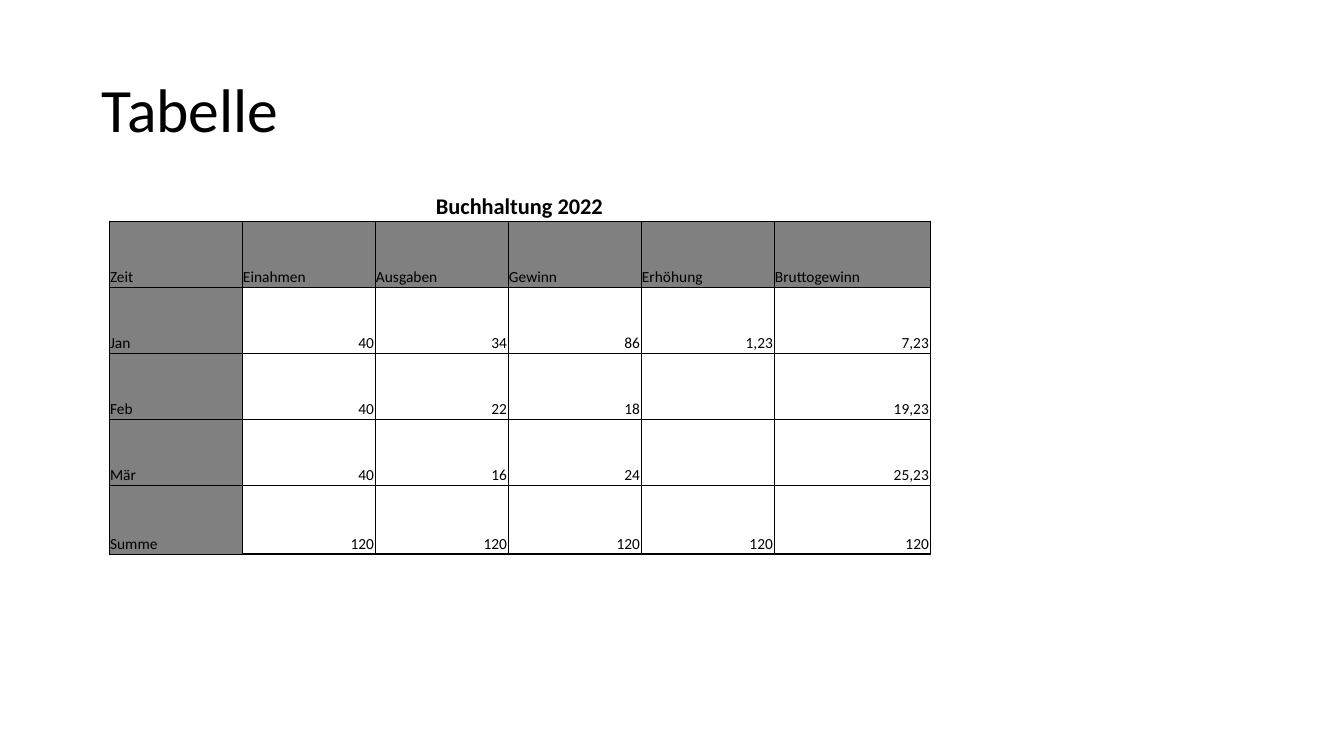
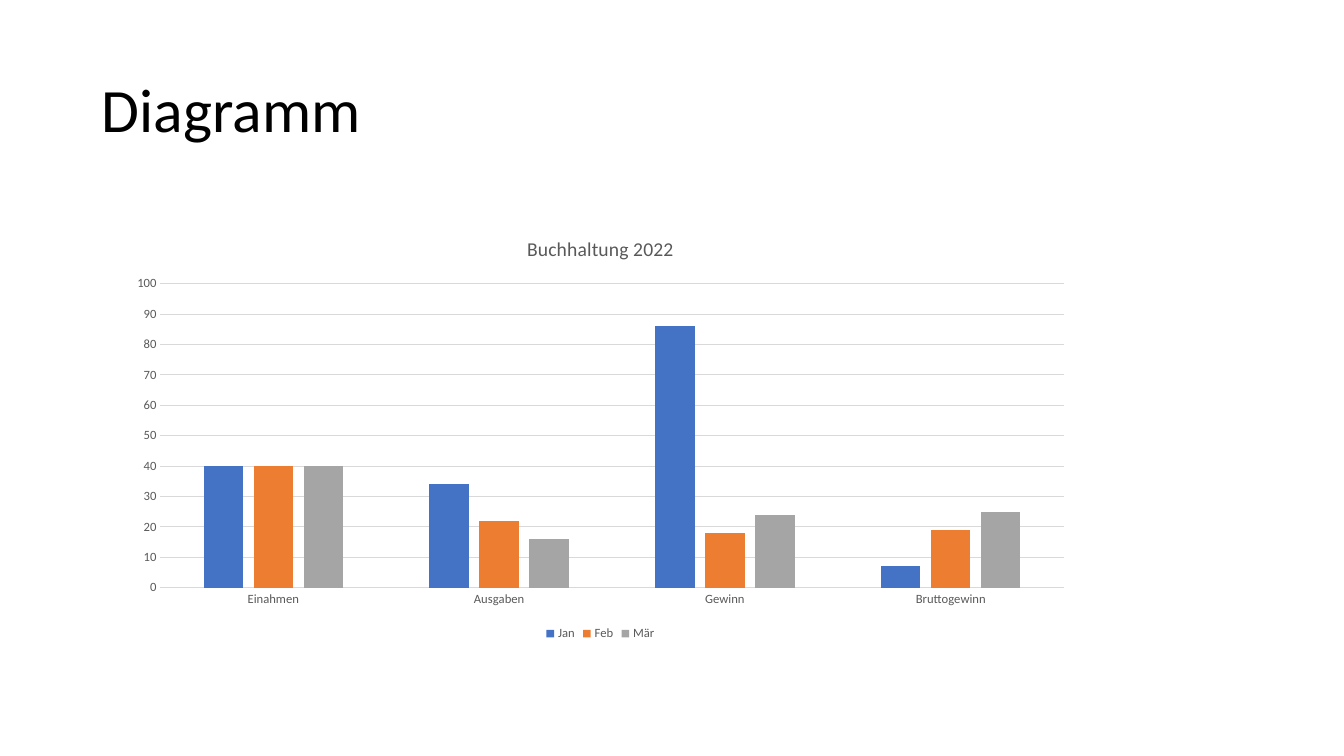
import pptx
import pptx.chart.data
import pptx.dml.color
import pptx.enum.chart
import pptx.enum.text
import pptx.oxml.ns
import pptx.util
from lxml import etree

SLIDE_W, SLIDE_H = 1344, 756
EMU_PER_PX = 12192000 / SLIDE_W
FONT = "Calibri"
COLORS = {
    "text": "000000",
    "header": "808080",
    "chart_text": "595959",
    "grid": "D9D9D9",
    "Jan": "4472C4",
    "Feb": "ED7D31",
    "Mär": "A5A5A5",
}
NO_TABLE_STYLE = "{2D5ABB26-0587-4C30-8999-92F81FD0307C}"
ALIGN = pptx.enum.text.PP_ALIGN

CAPTION = "Buchhaltung 2022"
HEADINGS = ["Zeit", "Einahmen", "Ausgaben", "Gewinn", "Erhöhung", "Bruttogewinn"]
ACCOUNTS = [
    ["Jan", "40", "34", "86", "1,23", "7,23"],
    ["Feb", "40", "22", "18", "", "19,23"],
    ["Mär", "40", "16", "24", "", "25,23"],
    ["Summe"] + ["120"] * 5,
]
COLUMN_WIDTHS = [133] * 5 + [156]
ROW_HEIGHTS = [92] + [66] * 4 + [69]

CHART_CATEGORIES = ["Einahmen", "Ausgaben", "Gewinn", "Bruttogewinn"]
MONTHS = {
    "Jan": (40, 34, 86, 7),
    "Feb": (40, 22, 18, 19),
    "Mär": (40, 16, 24, 25),
}


def px(length):
    return pptx.util.Emu(round(length * EMU_PER_PX))


def box(*lengths):
    return [px(length) for length in lengths]


def rgb(name):
    return pptx.dml.color.RGBColor.from_string(COLORS[name])


def set_font(font, size, color="text", bold=False):
    font.name = FONT
    font.size = pptx.util.Pt(size)
    font.bold = bold
    font.color.rgb = rgb(color)


def add_titled_slide(deck, title):
    slide = deck.slides.add_slide(deck.slide_layouts[6])
    frame = slide.shapes.add_textbox(*box(92, 40, 1159, 146)).text_frame
    frame.word_wrap = True
    frame.vertical_anchor = pptx.enum.text.MSO_ANCHOR.MIDDLE
    heading = frame.paragraphs[0]
    heading.text = title
    heading.line_spacing = 0.9
    set_font(heading.font, 44)
    return slide


def add_border(cell, side, width):
    """Draw one side (L, R, T or B); must come before the cell's fill."""
    qn = pptx.oxml.ns.qn
    line = etree.SubElement(cell._tc.get_or_add_tcPr(), qn(f"a:ln{side}"),
                            w=str(pptx.util.Pt(width)))
    fill = etree.SubElement(line, qn("a:solidFill"))
    etree.SubElement(fill, qn("a:srgbClr"), val=COLORS["text"])


def fill_cell(cell, text, align, borders, size=11, bold=False, shaded=False):
    cell.margin_left = cell.margin_right = cell.margin_top = px(1)
    cell.margin_bottom = 0
    cell.vertical_anchor = pptx.enum.text.MSO_ANCHOR.BOTTOM
    for side, width in borders.items():
        add_border(cell, side, width)
    if shaded:
        cell.fill.solid()
        cell.fill.fore_color.rgb = rgb("header")
    else:
        cell.fill.background()
    paragraph = cell.text_frame.paragraphs[0]
    paragraph.text = text
    paragraph.alignment = align
    set_font(paragraph.font, size, bold=bold)


def add_accounts_table(slide):
    rows = [HEADINGS] + ACCOUNTS
    table = slide.shapes.add_table(
        len(ROW_HEIGHTS), len(COLUMN_WIDTHS),
        *box(109, 129, sum(COLUMN_WIDTHS), sum(ROW_HEIGHTS))).table
    table.first_row = table.horz_banding = False
    table._tbl.tblPr.find(pptx.oxml.ns.qn("a:tableStyleId")).text = NO_TABLE_STYLE
    for column, width in zip(table.columns, COLUMN_WIDTHS):
        column.width = px(width)
    for row, height in zip(table.rows, ROW_HEIGHTS):
        row.height = px(height)

    table.cell(0, 0).merge(table.cell(0, len(COLUMN_WIDTHS) - 1))
    fill_cell(table.cell(0, 0), CAPTION, ALIGN.CENTER, {"B": 0.5}, size=16, bold=True)
    for r, values in enumerate(rows, start=1):
        for c, value in enumerate(values):
            is_heading = r == 1 or c == 0
            is_total = r == len(rows) and c > 0
            borders = {"L": 0.5, "R": 0.5, "T": 0.5, "B": 1 if is_total else 0.5}
            fill_cell(table.cell(r, c), value, ALIGN.LEFT if is_heading else ALIGN.RIGHT,
                      borders, shaded=is_heading)


def style_line(line, color):
    line.color.rgb = rgb(color)
    line.width = pptx.util.Pt(0.75)


def add_accounts_chart(slide):
    enums = pptx.enum.chart
    data = pptx.chart.data.CategoryChartData()
    data.categories = CHART_CATEGORIES
    for month, values in MONTHS.items():
        data.add_series(month, values)
    chart = slide.shapes.add_chart(
        enums.XL_CHART_TYPE.COLUMN_CLUSTERED, *box(118, 218, 965, 427), data).chart
    set_font(chart.font, 10)

    chart.has_title = True
    caption = chart.chart_title.text_frame.paragraphs[0]
    caption.text = CAPTION
    set_font(caption.font, 14, "chart_text")
    chart.chart_title.include_in_layout = False

    chart.has_legend = True
    chart.legend.position = enums.XL_LEGEND_POSITION.BOTTOM
    chart.legend.include_in_layout = False
    set_font(chart.legend.font, 9, "chart_text")

    for axis in (chart.category_axis, chart.value_axis):
        axis.major_tick_mark = axis.minor_tick_mark = enums.XL_TICK_MARK.NONE
        set_font(axis.tick_labels.font, 9, "chart_text")
    style_line(chart.category_axis.format.line, "grid")
    chart.value_axis.format.line.fill.background()
    style_line(chart.value_axis.major_gridlines.format.line, "grid")

    plot = chart.plots[0]
    plot.gap_width = 219
    plot.overlap = -27
    plot.vary_by_categories = False
    for series in plot.series:
        series.format.fill.solid()
        series.format.fill.fore_color.rgb = rgb(series.name)


def main():
    deck = pptx.Presentation()
    deck.slide_width, deck.slide_height = box(SLIDE_W, SLIDE_H)
    add_accounts_table(add_titled_slide(deck, "Tabelle"))
    add_accounts_chart(add_titled_slide(deck, "Diagramm"))
    deck.save("out.pptx")


if __name__ == "__main__":
    main()
